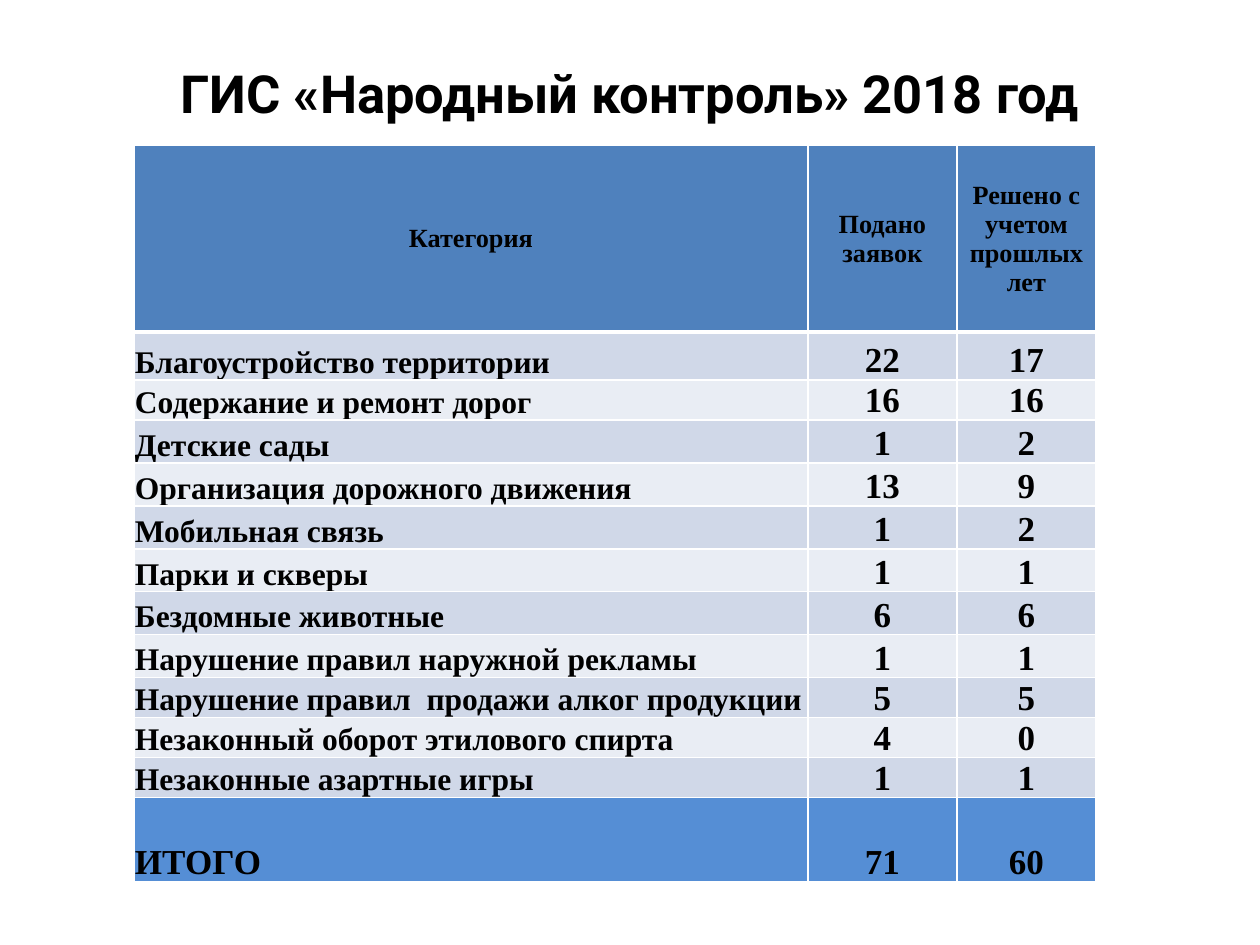
from pptx import Presentation
from pptx import util as u
from pptx.dml.color import RGBColor
from pptx.enum import text
from pptx.oxml import parse_xml
from pptx.oxml.ns import nsdecls

PX = 914400 / 126
CENTER = text.PP_ALIGN.CENTER
LEFT = text.PP_ALIGN.LEFT
MIDDLE = text.MSO_ANCHOR.MIDDLE
BOTTOM = text.MSO_ANCHOR.BOTTOM

HEADER = ("Категория", "Подано заявок", "Решено с учетом прошлых лет")
CATEGORIES = [
    ("Благоустройство территории", 22, 17),
    ("Содержание и ремонт дорог", 16, 16),
    ("Детские сады", 1, 2),
    ("Организация дорожного движения", 13, 9),
    ("Мобильная связь", 1, 2),
    ("Парки и скверы", 1, 1),
    ("Бездомные животные", 6, 6),
    ("Нарушение правил наружной рекламы", 1, 1),
    ("Нарушение правил  продажи алког продукции", 5, 5),
    ("Незаконный оборот этилового спирта", 4, 0),
    ("Незаконные азартные игры", 1, 1),
]
TOTAL = ("ИТОГО", 71, 60)
COLUMN_WIDTHS = [674, 149, 139]
ROW_HEIGHTS = [187, 48, 40] + [43] * 6 + [40] * 3 + [84]
BANDS = ("D0D8E8", "E9EDF4")


def px(length):
    return u.Emu(round(length * PX))


def color(value):
    return RGBColor.from_string(value)


def apply(target, values):
    for name, value in values.items():
        setattr(target, name, value)


class SlideBuilder:
    """Holds the style and the current slide, and adds each kind of element."""

    ink = "000000"
    grid = "FFFFFF"
    title_font = "Roboto"
    table_font = "Times New Roman"

    def __init__(self, presentation):
        self.slide = presentation.slides.add_slide(presentation.slide_layouts[5])

    def add_text(self, frame, content, font, size, align):
        paragraph = frame.paragraphs[0]
        paragraph.alignment = align
        run = paragraph.add_run()
        run.text = str(content)
        apply(run.font, {"name": font, "size": u.Pt(size), "bold": True})
        run.font.color.rgb = color(self.ink)

    def title(self, content, left, top, width, height, size):
        shape = self.slide.shapes.title
        apply(shape, {"left": px(left), "top": px(top),
                      "width": px(width), "height": px(height)})
        shape.text_frame.vertical_anchor = MIDDLE
        self.add_text(shape.text_frame, content, self.title_font, size, CENTER)

    def table(self, left, top, widths, heights):
        frame = self.slide.shapes.add_table(
            len(heights), len(widths), px(left), px(top),
            px(sum(widths)), px(sum(heights)))
        table = frame.table
        for column, width in zip(table.columns, widths):
            column.width = px(width)
        for row, height in zip(table.rows, heights):
            row.height = px(height)
        return table

    def borders(self, cell, top, bottom):
        properties = cell._tc.get_or_add_tcPr()
        for side, points in (("L", 1), ("R", 1), ("T", top), ("B", bottom)):
            properties.append(parse_xml(
                f'<a:ln{side} {nsdecls("a")} w="{u.Pt(points)}"><a:solidFill>'
                f'<a:srgbClr val="{self.grid}"/></a:solidFill></a:ln{side}>'))

    def row(self, table, index, values, fill, sizes, first_align=LEFT, anchor=BOTTOM):
        for column, value in enumerate(values):
            cell = table.cell(index, column)
            apply(cell, {"margin_left": px(1), "margin_right": px(1),
                         "margin_top": px(1), "margin_bottom": 0,
                         "vertical_anchor": anchor})
            self.borders(cell, 3 if index == 1 else 1, 3 if index == 0 else 1)
            cell.fill.solid()
            cell.fill.fore_color.rgb = color(fill)
            align = CENTER if column else first_align
            self.add_text(cell.text_frame, value, self.table_font, sizes[column], align)


def main():
    presentation = Presentation()
    apply(presentation, {"slide_width": px(1260), "slide_height": px(945)})
    builder = SlideBuilder(presentation)
    builder.title("ГИС «Народный контроль» 2018 год", 63, 38, 1134, 110, 30)
    table = builder.table(134, 145, COLUMN_WIDTHS, ROW_HEIGHTS)
    builder.row(table, 0, HEADER, "4F81BD", (15, 15, 15), CENTER, MIDDLE)
    for index, category in enumerate(CATEGORIES):
        builder.row(table, index + 1, category, BANDS[index % 2], (18, 20, 20))
    builder.row(table, len(CATEGORIES) + 1, TOTAL, "558ED5", (20, 20, 20))
    presentation.save("out.pptx")


if __name__ == "__main__":
    main()
